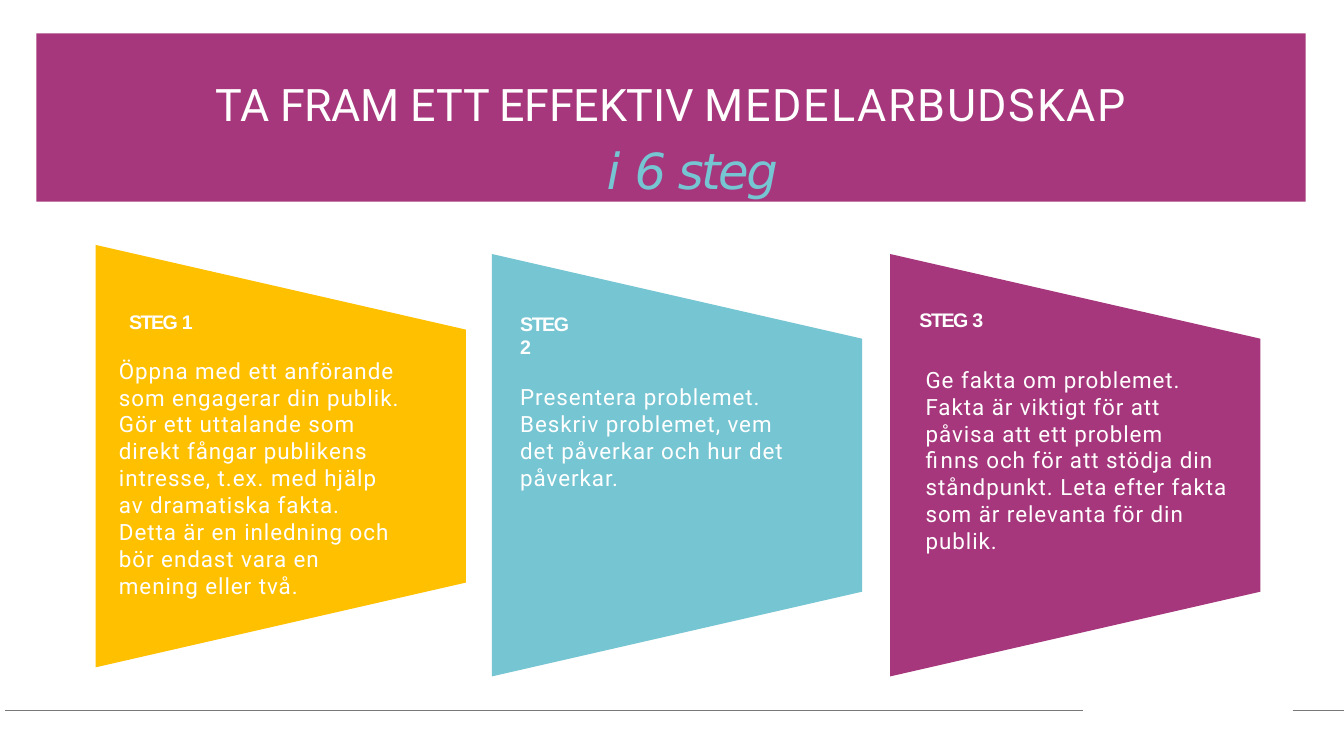
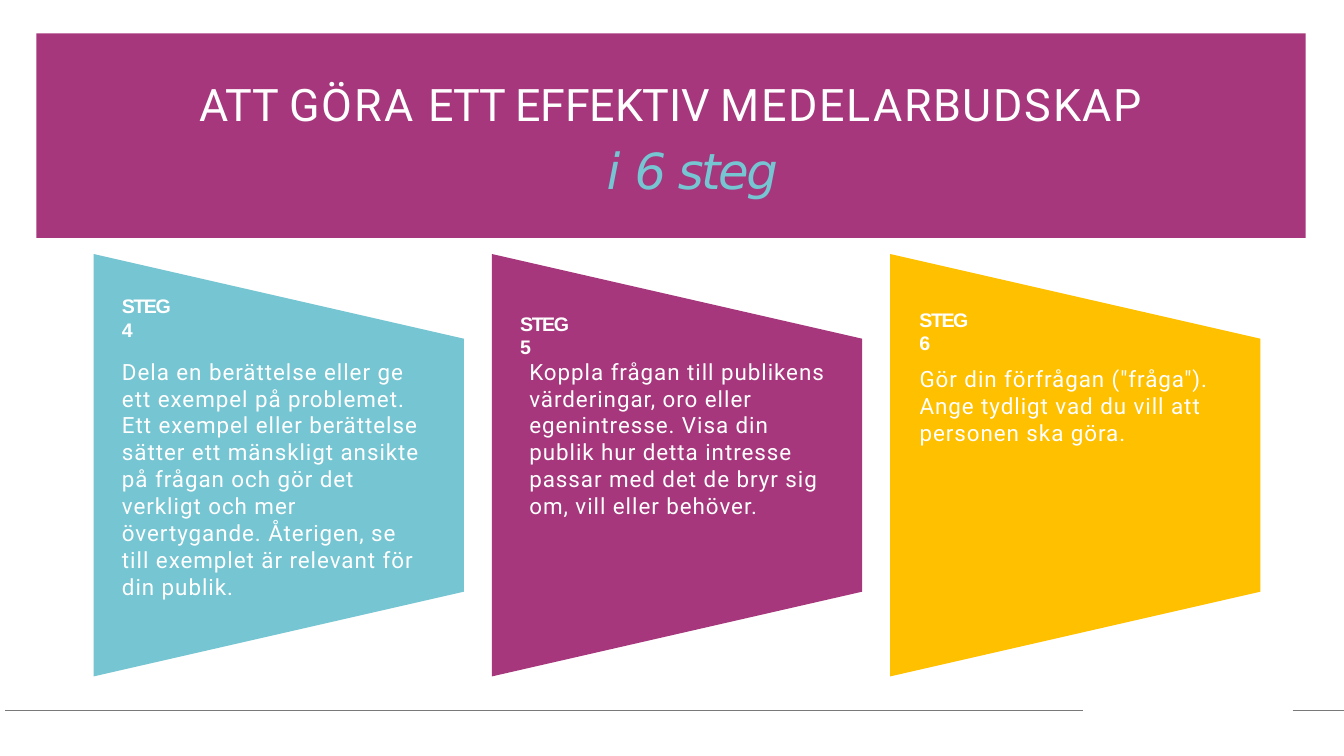
from lxml.etree import SubElement
from pptx import Presentation
from pptx.dml.color import RGBColor
from pptx.enum.text import MSO_ANCHOR as Anchor, MSO_AUTO_SIZE as Fit, PP_ALIGN as Align
from pptx.oxml.ns import qn
from pptx.util import Pt

PX = 9144  # 100 px to the inch
WHITE, GREY = "FFFFFF", "797979"
PLUM, TEAL, GOLD = "A6377C", "76C5D2", "FFC000"
COLS = (93, 488, 883)
TOP = 252

# Each run is (text, letter spacing in points).
FIRST = [("TA FRAM ETT EFFEKTIV ", -0.2), ("MEDELARBUDSKAP", 1.2)]
SECOND = [("ATT ", -0.2), ("GÖRA ", 1.4), ("ETT ", -0.7),
          ("EFFEKTIV ", -0.2), ("MEDELARBUDSKAP", 1.2)]
TAGLINE = [("i ", -1), ("6 ", -3.1), ("steg", -1.8)]

# Each step: number, colour, panel corner, label (x, y, w), body (x, y, w), paragraphs.
STEPS_A = [
    (1, GOLD, (95, 243), (128, 307, 90), (118, 354, 280), [
        "Öppna med ett anförande som engagerar din publik. Gör ett uttalande "
        "som direkt fångar publikens intresse, t.ex. med hjälp av dramatiska "
        "fakta. Detta är en inledning och bör endast vara en mening eller två."]),
    (2, TEAL, (COLS[1], TOP), (516, 309, 60), (516, 380, 274), [
        "Presentera problemet.",
        "Beskriv problemet, vem det påverkar och hur det påverkar."]),
    (3, PLUM, (COLS[2], TOP), (912, 305, 90), (918, 363, 305), [
        "Ge fakta om problemet.",
        "Fakta är viktigt för att påvisa att ett problem",
        "finns och för att stödja din",
        "ståndpunkt. Leta efter fakta som är relevanta för din publik."]),
]
STEPS_B = [
    (4, TEAL, (COLS[0], TOP), (121, 292, 60), (121, 355, 305), [
        "Dela en berättelse eller ge ett exempel på problemet. Ett exempel "
        "eller berättelse sätter ett mänskligt ansikte på frågan och gör det "
        "verkligt och mer övertygande. Återigen, se till exemplet är relevant "
        "för din publik."]),
    (5, PLUM, (COLS[1], TOP), (516, 309, 60), (525, 355, 298), [
        "Koppla frågan till publikens värderingar, oro eller egenintresse. "
        "Visa din publik hur detta intresse passar med det de bryr sig om, "
        "vill eller behöver."]),
    (6, GOLD, (COLS[2], TOP), (912, 305, 60), (912, 362, 302), [
        "Gör din förfrågan (\"fråga\"). Ange tydligt vad du vill att "
        "personen ska göra."]),
]


def rgb(code):
    return RGBColor.from_string(code)


def px(*sizes):
    return [size * PX for size in sizes]


def setup(frame, top=0):
    """Clear the insets, wrap the text and anchor it at the top."""
    frame.word_wrap = True
    frame.auto_size = Fit.NONE
    frame.vertical_anchor = Anchor.TOP
    frame.margin_left = frame.margin_right = frame.margin_bottom = 0
    frame.margin_top = top * PX


def write(para, runs, face, size, color, bold=False, italic=False):
    font = para.font
    font.name, font.size = face, Pt(size)
    font.bold, font.italic = bold, italic
    font.color.rgb = rgb(color)
    for text, gap in runs:
        run = para.add_run()
        run.text = text
        run.font._element.set("spc", str(round(gap * 100)))


def add_text(slide, x, y, w, h):
    frame = slide.shapes.add_textbox(*px(x, y, w, h)).text_frame
    setup(frame)
    return frame


def add_title(slide, runs, height):
    band = slide.shapes.title
    band.left, band.top, band.width, band.height = px(36, 33, 1259, height)
    band.fill.solid()
    band.fill.fore_color.rgb = rgb(PLUM)
    frame = band.text_frame
    setup(frame, top=43)
    head, tail = frame.paragraphs[0], frame.add_paragraph()
    head.alignment = tail.alignment = Align.CENTER
    tail.space_before = Pt(7)
    tail._p.get_or_add_pPr().set("marL", str(42 * PX))
    write(head, runs, "Roboto", 32, WHITE)
    write(tail, TAGLINE, "DejaVu Sans", 35.5, TEAL, italic=True)


def add_rule(slide, start, end, y=705):
    line = slide.shapes.add_connector(1, *px(start, y, end, y))
    line.line.color.rgb = rgb(GREY)
    line.line.width = Pt(0.5)
    SubElement(line._element.spPr, qn("a:effectLst"))


def add_panel(slide, x, y, color, w=367, h=419, drop=84):
    pen = slide.shapes.build_freeform(x, y, scale=PX)
    pen.add_line_segments([(x, y + h), (x + w, y + h - drop), (x + w, y + drop)])
    panel = pen.convert_to_shape()
    panel.shadow.inherit = False
    panel.fill.solid()
    panel.fill.fore_color.rgb = rgb(color)
    panel.line.fill.background()


def add_step(slide, number, color, corner, label, body, texts):
    add_panel(slide, *corner, color)
    para = add_text(slide, *label, 48).paragraphs[0]
    write(para, [("STEG ", -1.1), (str(number), 0.2)], "Arial", 14, WHITE, bold=True)
    frame = add_text(slide, *body, 245)
    for i, text in enumerate(texts):
        para = frame.add_paragraph() if i else frame.paragraphs[0]
        write(para, [(text, 0.7)], "Roboto", 16, WHITE)


def add_slide(deck, title, height, steps):
    slide = deck.slides.add_slide(deck.slide_layouts[5])
    add_title(slide, title, height)
    add_rule(slide, 5, 1074)
    add_rule(slide, 1282, 1333)
    for step in steps:
        add_step(slide, *step)


def main():
    deck = Presentation()
    deck.slide_width, deck.slide_height = px(1333, 750)
    add_slide(deck, FIRST, 167, STEPS_A)
    add_slide(deck, SECOND, 203, STEPS_B)
    deck.save("out.pptx")


if __name__ == "__main__":
    main()
